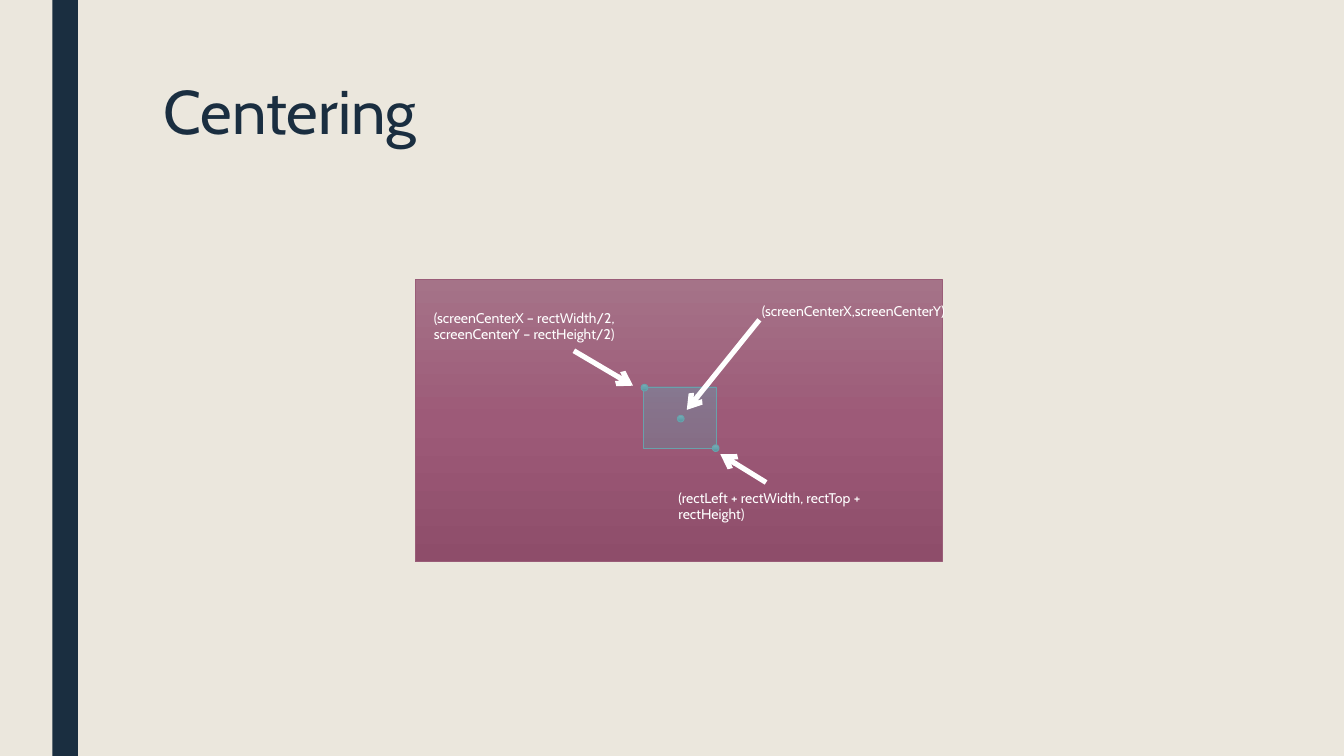
from lxml import etree
from pptx import Presentation
from pptx.dml.color import RGBColor
from pptx.enum import shapes, text
from pptx.oxml.ns import qn
from pptx.util import Inches, Pt

FONT = "Cabin"
NAVY, WHITE, TEAL = "1A2E40", "FFFFFF", "69A1AB"
DOT_STOPS = [(0, "7DACB5"), (50, "66A3AE"), (100, "57939E")]
DOT = 0.05


def color(value):
    return RGBColor.from_string(value)


def add_gradient_shape(kind, left, top, width, height, stops, line, angle=90, opacity=100):
    """Add an outlined shape; stops are (percent, colour), the angle runs clockwise."""
    shape = page.shapes.add_shape(kind, Inches(left), Inches(top), Inches(width), Inches(height))
    shape.shadow.inherit = False
    shape.line.color.rgb = color(line)
    shape.line.width = Pt(0.5)
    shape.fill.gradient()
    shape.fill.gradient_angle = 360 - angle
    stop_list = shape.element.spPr.find(".//" + qn("a:gsLst"))
    stop_list.clear()
    for position, value in stops:
        stop = etree.SubElement(stop_list, qn("a:gs"), pos=str(position * 1000))
        stop_color = etree.SubElement(stop, qn("a:srgbClr"), val=value)
        if opacity < 100:
            etree.SubElement(stop_color, qn("a:alpha"), val=str(opacity * 1000))


deck = Presentation()
deck.slide_width = Inches(10)
deck.slide_height = Inches(10 * 9 / 16)
page = deck.slides.add_slide(deck.slide_layouts[5])
page.background.fill.solid()
page.background.fill.fore_color.rgb = color("EBE7DD")

# Side bar
bar = page.shapes.add_shape(shapes.MSO_SHAPE.RECTANGLE, Inches(0.39), 0, Inches(0.19), deck.slide_height)
bar.shadow.inherit = False
bar.fill.solid()
bar.fill.fore_color.rgb = color(NAVY)
bar.line.fill.background()

# Title
title = page.shapes.title
title.left, title.top, title.width, title.height = Inches(1.12), Inches(0.56), Inches(7.88), Inches(1.22)
title.text_frame.vertical_anchor = text.MSO_ANCHOR.TOP
title.text_frame.auto_size = text.MSO_AUTO_SIZE.NONE
para = title.text_frame.paragraphs[0]
para.alignment = text.PP_ALIGN.LEFT
para.line_spacing = 0.89
span = para.add_run()
span.text = "Centering"
span.font.name, span.font.size = FONT, Pt(33)
span.font.color.rgb = color(NAVY)

# Screen, centred rectangle and its three marked points
add_gradient_shape(shapes.MSO_SHAPE.RECTANGLE, 3.09, 2.08, 3.92, 2.1,
                   [(0, "A57388"), (50, "9D5A78"), (100, "8E4D6A")], "9A5D78")
add_gradient_shape(shapes.MSO_SHAPE.RECTANGLE, 4.79, 2.88, 0.54, 0.46,
                   [(0, "5A98A3"), (100, "58ACBB")], TEAL, angle=270, opacity=33)
for left, top in [(4.77, 2.86), (5.04, 3.09), (5.3, 3.31)]:
    add_gradient_shape(shapes.MSO_SHAPE.OVAL, left, top, DOT, DOT, DOT_STOPS, TEAL)

# Arrows from the labels to the points
for start_x, start_y, end_x, end_y in [
    (5.65, 2.38, 5.11, 3.05),
    (4.27, 2.61, 4.71, 2.87),
    (5.7, 3.59, 5.36, 3.38),
]:
    arrow = page.shapes.add_connector(shapes.MSO_CONNECTOR.STRAIGHT, Inches(start_x), Inches(start_y),
                                      Inches(end_x), Inches(end_y))
    arrow.line.color.rgb = color(WHITE)
    arrow.line.width = Pt(2.75)
    etree.SubElement(arrow.line._get_or_add_ln(), qn("a:tailEnd"), type="arrow")
    etree.SubElement(arrow.element.spPr, qn("a:effectLst"))

# Coordinate labels
for left, top, width, height, wording in [
    (5.57, 2.2, 2, 0.23, "(screenCenterX,screenCenterY)"),
    (3.13, 2.25, 2.04, 0.35, "(screenCenterX – rectWidth/2, screenCenterY – rectHeight/2)"),
    (4.95, 3.59, 2.04, 0.35, "(rectLeft + rectWidth, rectTop + rectHeight)"),
]:
    box = page.shapes.add_textbox(Inches(left), Inches(top), Inches(width), Inches(height))
    box.text_frame.word_wrap = True
    box.text_frame.auto_size = text.MSO_AUTO_SIZE.SHAPE_TO_FIT_TEXT
    span = box.text_frame.paragraphs[0].add_run()
    span.text = wording
    span.font.name, span.font.size = FONT, Pt(7.5)
    span.font.color.rgb = color(WHITE)

deck.save("out.pptx")
